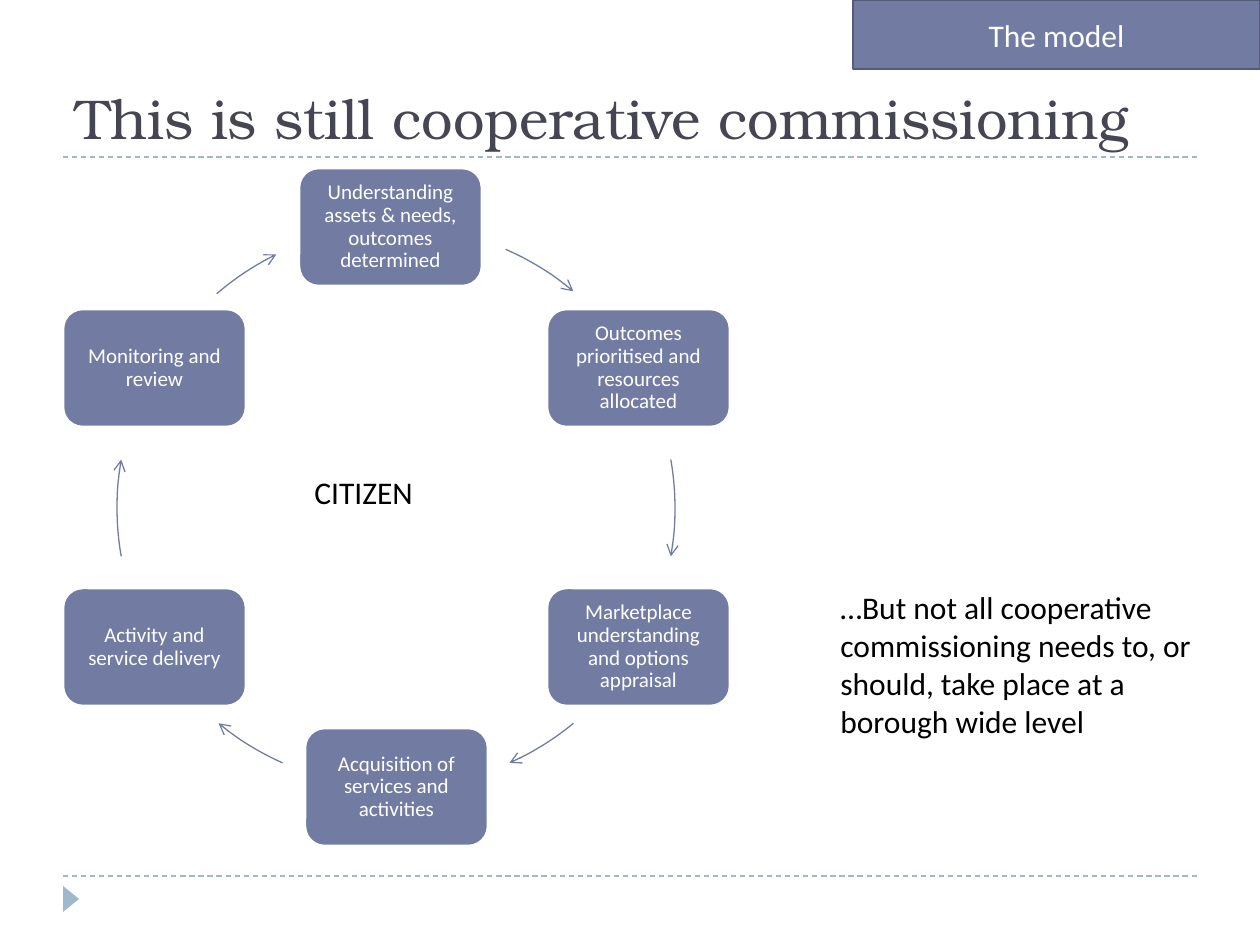
import dataclasses

import lxml.etree
import pptx
import pptx.dml.color
import pptx.enum.dml
import pptx.enum.shapes
import pptx.enum.text
import pptx.oxml.ns
import pptx.util

SHAPE = pptx.enum.shapes.MSO_SHAPE
ALIGN = pptx.enum.text.PP_ALIGN
ANCHOR = pptx.enum.text.MSO_ANCHOR
AUTO_SIZE = pptx.enum.text.MSO_AUTO_SIZE


@dataclasses.dataclass(frozen=True)
class Theme:
    accent: str = "727CA3"
    accent_edge: str = "545C79"
    trim: str = "9FB8CD"
    heading: str = "464653"
    light: str = "FFFFFF"
    dark: str = "000000"
    heading_font: str = "TeX Gyre Bonum"
    body_font: str = "Calibri"
    title_size: int = 32
    body_size: int = 18
    step_size: int = 12
    thin: float = 0.75
    thick: float = 1.5


THEME = Theme()
PX_PER_INCH = 126
LEFT, RIGHT = 63, 1197
STEP_WIDTH, STEP_HEIGHT = 183, 118
WEST, EAST = 63, 547
UPPER, LOWER = 309, 588
CIRCLE = 558

STEPS = [
    (299, 168, "Understanding assets & needs, outcomes determined"),
    (EAST, UPPER, "Outcomes prioritised and resources allocated"),
    (EAST, LOWER, "Marketplace understanding and options appraisal"),
    (305, 728, "Acquisition of services and activities"),
    (WEST, LOWER, "Activity and service delivery"),
    (WEST, UPPER, "Monitoring and review"),
]

ARCS = [
    (115, 226, 293.6, 310),
    (117, 229, 350, 10),
    (117, 229, 50.5, 66),
    (117, 229, 114, 129.5),
    (117, 229, 170, 190),
    (120, 226, 229.2, 243.9),
]


def emu(px):
    return pptx.util.Emu(round(px * 914400 / PX_PER_INCH))


def color(value):
    return pptx.dml.color.RGBColor.from_string(value)


def set_line(line, value, width):
    line.color.rgb = color(value)
    line.width = pptx.util.Pt(width)


def write(box, text, size, ink, font=THEME.body_font, align=ALIGN.LEFT, anchor=ANCHOR.TOP, spacing=None):
    frame = box.text_frame
    frame.text = text
    frame.word_wrap = True
    frame.vertical_anchor = anchor
    para = frame.paragraphs[0]
    para.alignment = align
    if spacing:
        para.line_spacing = spacing
    for span in para.runs:
        span.font.name = font
        span.font.size = pptx.util.Pt(size)
        span.font.color.rgb = color(ink)


def add_block(page, kind, left, top, width, height, fill):
    block = page.shapes.add_shape(kind, emu(left), emu(top), emu(width), emu(height))
    block.shadow.inherit = False
    block.fill.solid()
    block.fill.fore_color.rgb = color(fill)
    block.line.fill.background()
    return block


def add_rule(page, top):
    rule = page.shapes.add_connector(
        pptx.enum.shapes.MSO_CONNECTOR.STRAIGHT, emu(LEFT), emu(top), emu(RIGHT), emu(top))
    set_line(rule.line, THEME.trim, THEME.thin)
    rule.line.dash_style = pptx.enum.dml.MSO_LINE.DASH
    lxml.etree.SubElement(rule._element.spPr, pptx.oxml.ns.qn("a:effectLst"))


def add_title(page, text):
    title = page.shapes.title
    title.left, title.top, title.width, title.height = emu(LEFT), emu(21), emu(RIGHT - LEFT), emu(136)
    write(title, text, THEME.title_size, THEME.heading, THEME.heading_font, anchor=ANCHOR.BOTTOM)
    title.text_frame.auto_size = AUTO_SIZE.NONE


def add_tag(page, text):
    tag = add_block(page, SHAPE.RECTANGLE, 853, 0, 407, 69, THEME.accent)
    set_line(tag.line, THEME.accent_edge, THEME.thick)
    write(tag, text, THEME.body_size, THEME.light, align=ALIGN.CENTER, anchor=ANCHOR.MIDDLE)


def add_step(page, left, top, text):
    step = add_block(page, SHAPE.ROUNDED_RECTANGLE, left, top, STEP_WIDTH, STEP_HEIGHT, THEME.accent)
    set_line(step.line, THEME.light, THEME.thick)
    write(step, text, THEME.step_size, THEME.light, align=ALIGN.CENTER, anchor=ANCHOR.MIDDLE, spacing=0.9)


def add_arc(page, left, top, start, end):
    arc = page.shapes.add_shape(SHAPE.ARC, emu(left), emu(top), emu(CIRCLE), emu(CIRCLE))
    arc.shadow.inherit = False
    arc.fill.background()
    set_line(arc.line, THEME.accent, THEME.thin)
    for index, degrees in enumerate((start, end)):
        arc.adjustments[index] = degrees * 60000 / 100000
    outline = arc._element.spPr.find(pptx.oxml.ns.qn("a:ln"))
    lxml.etree.SubElement(outline, pptx.oxml.ns.qn("a:tailEnd"), type="arrow")


def add_note(page, left, top, width, height, text):
    note = page.shapes.add_textbox(emu(left), emu(top), emu(width), emu(height))
    write(note, text, THEME.body_size, THEME.dark)
    note.text_frame.auto_size = AUTO_SIZE.SHAPE_TO_FIT_TEXT


def main():
    deck = pptx.Presentation()
    deck.slide_width, deck.slide_height = emu(1260), emu(945)
    page = deck.slides.add_slide(deck.slide_layouts.get_by_name("Title Only"))
    for top in (876, 157):
        add_rule(page, top)
    marker = add_block(page, SHAPE.ISOSCELES_TRIANGLE, 58, 891, 26, 16, THEME.trim)
    marker.rotation = 90
    add_title(page, "This is still cooperative commissioning")
    add_tag(page, "The model")
    for step, arc in zip(STEPS, ARCS):
        add_step(page, *step)
        add_arc(page, *arc)
    add_note(page, 302, 467, 189, 50, "CITIZEN")
    add_note(page, 828, 582, 397, 165,
             "…But not all cooperative commissioning needs to, or should, take place at a borough wide level")
    deck.save("out.pptx")


if __name__ == "__main__":
    main()
